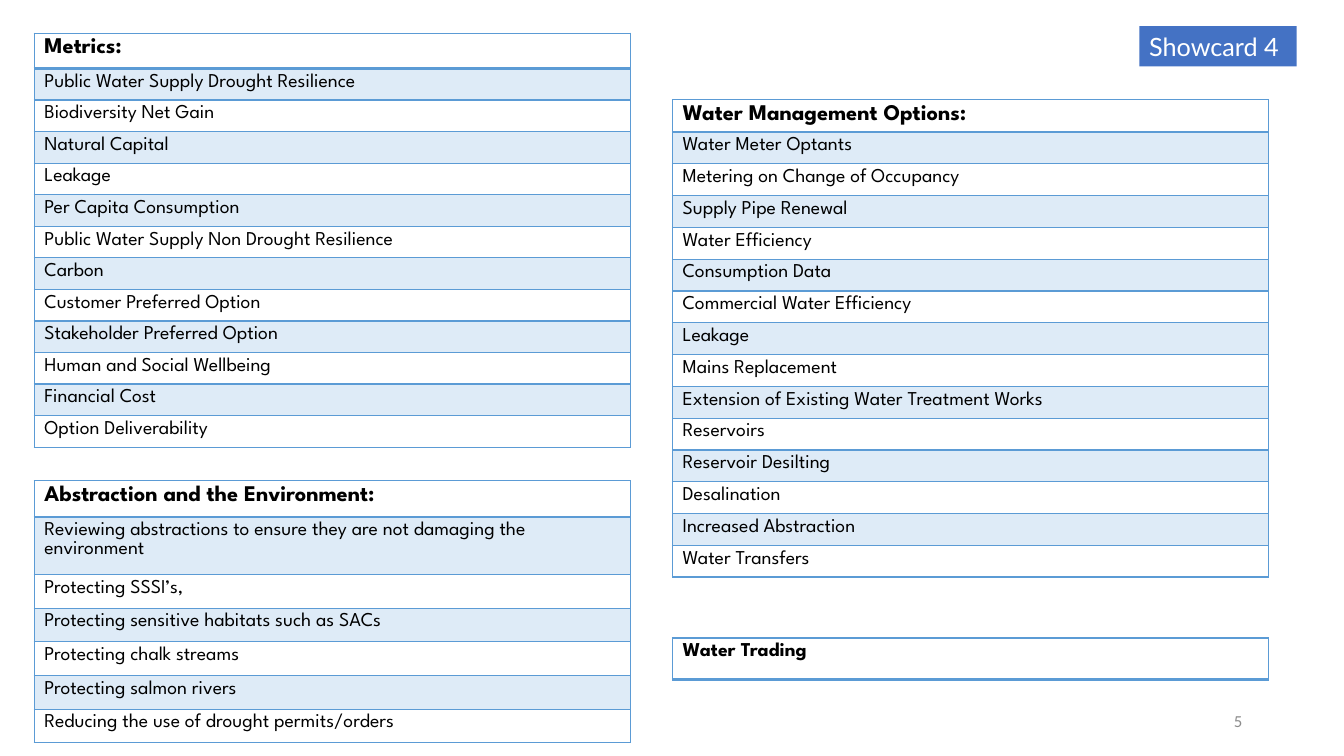
import pptx
import pptx.util
import pptx.dml.color
import pptx.enum.shapes
import pptx.enum.text
import lxml.etree
import pptx.oxml.ns

Inches, Pt = pptx.util.Inches, pptx.util.Pt
RGB = pptx.dml.color.RGBColor.from_string
COLORS = {"edge": "5B9BD5", "band": "DEEBF7", "badge": "4472C4",
          "text": "000000", "light": "FFFFFF", "page": "8C8C8C"}

deck = pptx.Presentation()
deck.slide_width, deck.slide_height = Inches(13.33), Inches(7.5)
slide = deck.slides.add_slide(deck.slide_layouts[6])


def style(para, face, size, color, bold=False):
    para.font.name = face
    para.font.size = Pt(size)
    para.font.bold = bold
    para.font.color.rgb = RGB(COLORS[color])


def edge(cell, side, width):
    """Draw one border of a cell; side is L, R, T or B."""
    props = cell._tc.get_or_add_tcPr()
    line = lxml.etree.SubElement(props, pptx.oxml.ns.qn("a:ln" + side), w=str(Pt(width)))
    fill = lxml.etree.SubElement(line, pptx.oxml.ns.qn("a:solidFill"))
    lxml.etree.SubElement(fill, pptx.oxml.ns.qn("a:srgbClr"), val=COLORS["edge"])


metrics = [
    "Metrics:", "Public Water Supply Drought Resilience", "Biodiversity Net Gain",
    "Natural Capital", "Leakage", "Per Capita Consumption",
    "Public Water Supply Non Drought Resilience", "Carbon",
    "Customer Preferred Option", "Stakeholder Preferred Option",
    "Human and Social Wellbeing", "Financial Cost", "Option Deliverability"]
options = [
    "Water Management Options:", "Water Meter Optants",
    "Metering on Change of Occupancy", "Supply Pipe Renewal", "Water Efficiency",
    "Consumption Data", "Commercial Water Efficiency", "Leakage",
    "Mains Replacement", "Extension of Existing Water Treatment Works",
    "Reservoirs", "Reservoir Desilting", "Desalination",
    "Increased Abstraction", "Water Transfers"]
trading = ["Water Trading"]
nature = [
    "Abstraction and the Environment:",
    "Reviewing abstractions to ensure they are not damaging the environment",
    "Protecting SSSI’s,", "Protecting sensitive habitats such as SACs",
    "Protecting chalk streams", "Protecting salmon rivers",
    "Reducing the use of drought permits/orders"]

# rows, left, top, total height, heights of the leading rows, heading size
tables = [
    (metrics, 0.34, 0.33, 4.11, [0.35], 16),
    (options, 6.67, 0.99, 4.74, [0.32], 16),
    (trading, 6.67, 6.33, 0.41, [0.41], 14),
    (nature, 0.34, 4.77, 2.6, [0.36, 0.57], 16)]

for rows, left, top, height, lead, size in tables:
    frame = slide.shapes.add_table(len(rows), 1, Inches(left), Inches(top),
                                   Inches(5.91), Inches(height))
    table = frame.table
    table.horz_banding = False
    rest = (height - sum(lead)) / max(len(rows) - len(lead), 1)
    for i, text in enumerate(rows):
        head = i == 0
        table.rows[i].height = Inches(lead[i] if i < len(lead) else rest)
        cell = table.cell(i, 0)
        cell.text = text
        style(cell.text_frame.paragraphs[0], "League Spartan",
              size if head else 14, "text", head)
        for side in "LRTB":
            edge(cell, side, 2 if head and side == "B" else 1)
        if i % 2:
            cell.fill.solid()
            cell.fill.fore_color.rgb = RGB(COLORS["band"])
        else:
            cell.fill.background()

badge = slide.shapes.add_shape(pptx.enum.shapes.MSO_SHAPE.RECTANGLE,
                               Inches(11.3), Inches(0.26), Inches(1.56), Inches(0.4))
badge.shadow.inherit = False
badge.fill.solid()
badge.fill.fore_color.rgb = RGB(COLORS["badge"])
badge.line.fill.background()
badge.text_frame.text = "Showcard 4"
badge.text_frame.word_wrap = False
para = badge.text_frame.paragraphs[0]
para.alignment = pptx.enum.text.PP_ALIGN.LEFT
style(para, "Lato", 18, "light")

page = slide.shapes.add_textbox(Inches(9.42), Inches(6.95), Inches(3), Inches(0.4))
page.text_frame.text = "5"
page.text_frame.word_wrap = True
page.text_frame.vertical_anchor = pptx.enum.text.MSO_ANCHOR.MIDDLE
para = page.text_frame.paragraphs[0]
para.alignment = pptx.enum.text.PP_ALIGN.RIGHT
style(para, "Calibri", 12, "page")

deck.save("out.pptx")
